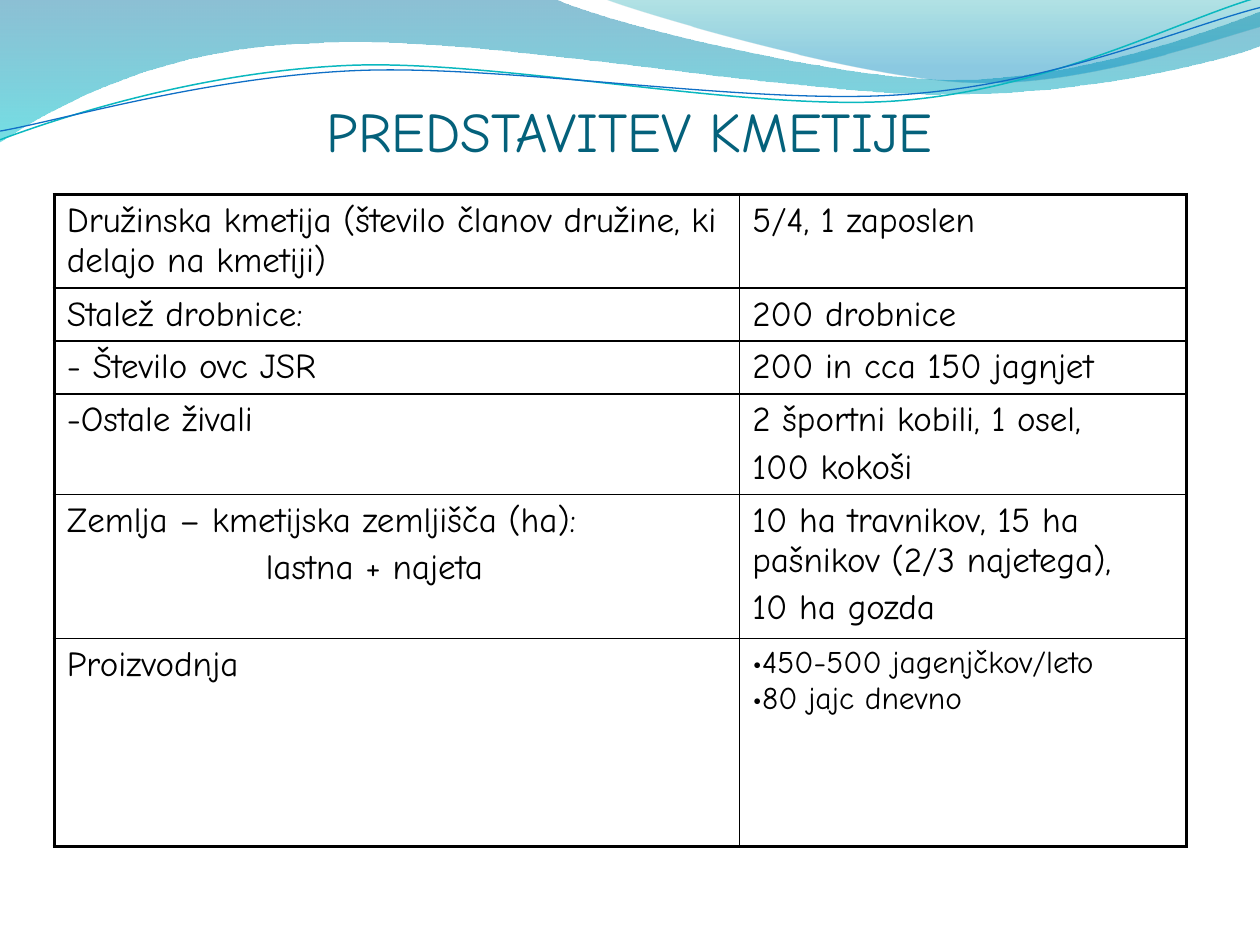
from dataclasses import dataclass

from lxml.etree import SubElement
from pptx import Presentation
from pptx.dml.color import RGBColor
from pptx.enum.text import MSO_ANCHOR, PP_ALIGN
from pptx.oxml import parse_xml
from pptx.oxml.ns import nsdecls, qn
from pptx.util import Pt


@dataclass(frozen=True)
class Theme:
    font: str = "Comic Neue"
    title_color: str = "04617B"
    ink: str = "000000"
    teal: str = "0AB8BF"
    blue: str = "0F6FC6"
    broad_wave: tuple = ((0, "0074A1", 45), (1, "00C6CF", 55))
    right_wave: tuple = ((0, "00A1A9", 30), (0.8, "008BBF", 45))
    title_size: float = 32
    body_size: float = 20
    list_size: float = 18
    paragraph_gap: float = 4
    outer_border: float = 2.25
    inner_border: float = 1


THEME = Theme()

BROAD_WAVE = [
    [(0, 0)], [(316.8, -0.7)],
    [(342.7, 12.2), (478.1, 45.4), (545.8, 45.4)],
    [(614.2, 45.4), (689.8, 18.7), (720, 6.5)],
    [(720.7, 25.9)],
    [(707.8, 31.7), (626.4, 54.7), (537.1, 54)],
    [(447.8, 54), (275, 20.2), (185, 24.5)],
    [(92.9, 25.9), (33.1, 59.8), (-0.7, 81.4)],
]
RIGHT_WAVE = [
    [(344.9, -0.7)],
    [(366.5, 7.9), (491, 44.6), (553.7, 46.8)],
    [(616.3, 49.7), (691.9, 23), (720, 15.1)],
    [(720, 0)],
]
TEAL_CURVE = [
    [(0, 79.9)],
    [(34.6, 67), (113.8, 41), (199.4, 37.4)],
    [(284.4, 33.8), (427, 64.1), (513.4, 57.6)],
    [(599.8, 51.1), (675.4, 10.8), (718.6, -1.4)],
]
BLUE_CURVE = [
    [(0, 74.9)],
    [(33.8, 69.1), (118.1, 43.9), (203.8, 40.3)],
    [(290.2, 36.7), (429.8, 60.5), (516.2, 54)],
    [(601.9, 48.2), (677.5, 15.1), (720, 4.3)],
]

COLUMN_WIDTHS = (391.7, 255.3)
ROWS = [
    (53.5, ["Družinska kmetija (število članov družine, ki delajo na kmetiji)"],
     ["5/4, 1 zaposlen"]),
    (30.2, ["Stalež drobnice:"], ["200 drobnice"]),
    (30.2, ["- Število ovc JSR"], ["200 in cca 150 jagnjet"]),
    (57.2, ["-Ostale živali"], ["2 športni kobili, 1 osel,", "100 kokoši"]),
    (82.3, ["Zemlja – kmetijska zemljišča (ha):", ("lastna + najeta", {"indent": 113.7})],
     ["10 ha travnikov, 15 ha pašnikov (2/3 najetega),", "10 ha gozda"]),
    (86.4, ["Proizvodnja"],
     [(text, {"size": THEME.list_size, "bullet": "•", "gap": 0})
      for text in ("450-500 jagenjčkov/leto", "80 jajc dnevno")]),
    (32.4, [], []),
]


def write_text(para, text, size=THEME.body_size, color=THEME.ink,
               align=PP_ALIGN.LEFT, gap=0, indent=0, bullet=None):
    para.alignment = align
    para.space_before = Pt(gap)
    span = para.add_run()
    span.text = text
    span.font.name = THEME.font
    span.font.size = Pt(size)
    span.font.color.rgb = RGBColor.from_string(color)
    properties = para._p.get_or_add_pPr()
    if indent:
        properties.set("marL", str(Pt(indent)))
    if bullet:
        properties.set("marL", "0")
        properties.set("indent", "0")
        SubElement(properties, qn("a:buFont"), typeface=THEME.font)
        SubElement(properties, qn("a:buChar"), char=bullet)


def add_outline(page, segments, close):
    ends = [(Pt(segment[-1][0]), Pt(segment[-1][1])) for segment in segments]
    builder = page.shapes.build_freeform(*ends[0])
    builder.add_line_segments(ends[1:], close=close)
    shape = builder.convert_to_shape()
    shape.shadow.inherit = False
    lines = list(shape.element.iter(qn("a:lnTo")))
    for line, segment in zip(lines, segments[1:]):
        if len(segment) == 3:
            bend_line(shape, line, segment)
    return shape


def bend_line(shape, line, points):
    line.tag = qn("a:cubicBezTo")
    for node in list(line):
        line.remove(node)
    for x, y in points:
        SubElement(line, qn("a:pt"), x=str(Pt(x) - shape.left), y=str(Pt(y) - shape.top))


def add_wave(page, segments, stops):
    wave = add_outline(page, segments, close=True)
    wave.line.fill.background()
    wave.fill.gradient()
    wave.fill.gradient_angle = 270
    for stop, (position, color, _) in zip(wave.fill.gradient_stops, stops):
        stop.position = position
        stop.color.rgb = RGBColor.from_string(color)
    colors = wave.element.spPr.iter(qn("a:srgbClr"))
    for node, (_, _, opacity) in zip(colors, stops):
        SubElement(node, qn("a:alpha"), val=str(opacity * 1000))


def add_curve(page, segments, color, width):
    curve = add_outline(page, segments, close=False)
    curve.fill.background()
    curve.line.color.rgb = RGBColor.from_string(color)
    curve.line.width = Pt(width)


def add_title(page, text):
    box = page.shapes.title
    box.element.getparent().append(box.element)
    box.left, box.top, box.width, box.height = Pt(36), Pt(3.6), Pt(648), Pt(90)
    frame = box.text_frame
    frame.word_wrap = True
    frame.vertical_anchor = MSO_ANCHOR.BOTTOM
    frame.margin_left = frame.margin_right = frame.margin_bottom = 0
    frame.margin_top = Pt(3.6)
    write_text(frame.paragraphs[0], text, size=THEME.title_size,
               color=THEME.title_color, align=PP_ALIGN.CENTER)


def set_borders(cell, widths):
    properties = cell._tc.get_or_add_tcPr()
    for index, (side, width) in enumerate(zip("LRTB", widths)):
        paint = (f'<a:solidFill><a:srgbClr val="{THEME.ink}"/></a:solidFill>'
                 if width else "<a:noFill/>")
        properties.insert(index, parse_xml(
            f'<a:ln{side} {nsdecls("a")} w="{Pt(width)}">{paint}</a:ln{side}>'))


def fill_cell(cell, entries):
    frame = cell.text_frame
    for index, entry in enumerate(entries):
        text, style = (entry, {}) if isinstance(entry, str) else entry
        para = frame.add_paragraph() if index else frame.paragraphs[0]
        gap = THEME.paragraph_gap if index else 0
        write_text(para, text, **{"gap": gap, **style})
    cell.fill.background()


def add_farm_table(page):
    height = sum(row[0] for row in ROWS)
    box = page.shapes.add_table(len(ROWS), len(COLUMN_WIDTHS), Pt(31), Pt(111.2),
                                Pt(sum(COLUMN_WIDTHS)), Pt(height))
    table = box.table
    table.first_row = table.horz_banding = False
    for column, width in zip(table.columns, COLUMN_WIDTHS):
        column.width = Pt(width)
    outer, inner = THEME.outer_border, THEME.inner_border
    last = len(ROWS) - 1
    edges = [outer] + [inner] * (last - 1) + [0, outer]
    for r, (row_height, *contents) in enumerate(ROWS):
        table.rows[r].height = Pt(row_height)
        for c, entries in enumerate(contents):
            cell = table.cell(r, c)
            fill_cell(cell, entries)
            sides = (inner, outer) if c else (outer, inner)
            set_borders(cell, (*sides, edges[r], edges[r + 1]))


def main():
    deck = Presentation()
    deck.slide_width, deck.slide_height = Pt(720), Pt(540)
    page = deck.slides.add_slide(deck.slide_layouts[5])
    add_wave(page, BROAD_WAVE, THEME.broad_wave)
    add_wave(page, RIGHT_WAVE, THEME.right_wave)
    add_curve(page, TEAL_CURVE, THEME.teal, 0.85)
    add_curve(page, BLUE_CURVE, THEME.blue, 0.75)
    add_title(page, "PREDSTAVITEV KMETIJE")
    add_farm_table(page)
    deck.save("out.pptx")


if __name__ == "__main__":
    main()
